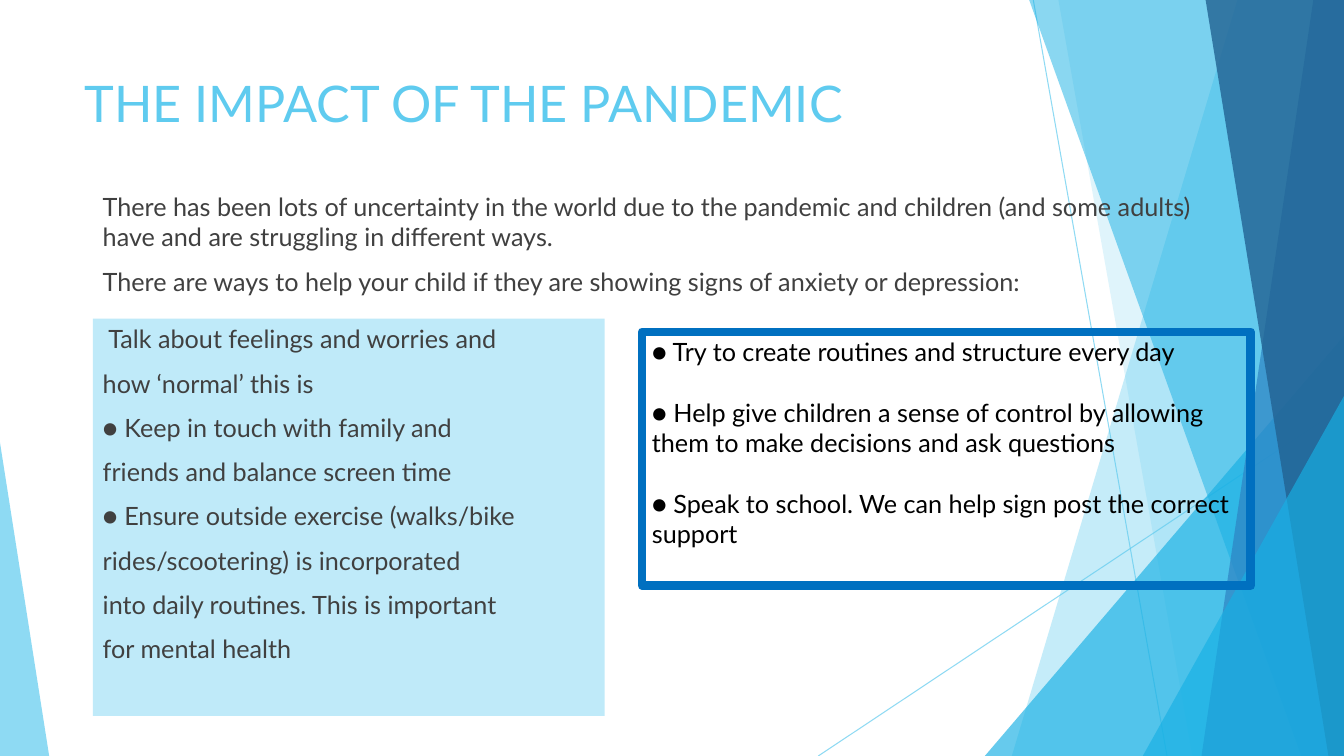
import pptx
import pptx.dml.color
import pptx.enum.shapes
import pptx.enum.text
import pptx.oxml.ns
import pptx.util
from lxml import etree

Cm = pptx.util.Cm
Pt = pptx.util.Pt
RGBColor = pptx.dml.color.RGBColor
MSO_SHAPE = pptx.enum.shapes.MSO_SHAPE
qn = pptx.oxml.ns.qn

SKY = RGBColor(0x5F, 0xCB, 0xEF)
CYAN = RGBColor(0x17, 0xB0, 0xE4)
BLUE = RGBColor(0x2E, 0x83, 0xC3)
NAVY = RGBColor(0x22, 0x62, 0x92)
PALE = RGBColor(0xBF, 0xEA, 0xF9)
FRAME = RGBColor(0x00, 0x70, 0xC0)
GREY = RGBColor(0x40, 0x40, 0x40)
BLACK = RGBColor(0x00, 0x00, 0x00)

presentation = pptx.Presentation()
presentation.slide_width = Cm(33.87)
presentation.slide_height = Cm(19.05)
slide = presentation.slides.add_slide(presentation.slide_layouts[6])
shapes = slide.shapes


def add_panel(top_x, bottom_x):
    right, top, bottom = Cm(33.87), Cm(-0.02), Cm(19.05)
    outline = shapes.build_freeform(Cm(top_x), top)
    outline.add_line_segments([(right, top), (right, bottom), (Cm(bottom_x), bottom)], close=True)
    return outline.convert_to_shape()


def add_triangle(left, top, width, height, apex):
    triangle = shapes.add_shape(
        MSO_SHAPE.ISOSCELES_TRIANGLE, Cm(left), Cm(top), Cm(width), Cm(height))
    triangle.adjustments[0] = apex
    return triangle


rays = []
for x1, y1, x2, y2 in [(26.04, 0, 29.41, 19.05), (33.87, 10.24, 20.62, 19.05)]:
    ray = shapes.add_connector(
        pptx.enum.shapes.MSO_CONNECTOR.STRAIGHT, Cm(x1), Cm(y1), Cm(x2), Cm(y2))
    ray.line.width = Pt(0.75)
    ray.line.fill.solid()
    etree.SubElement(ray._element.spPr, qn("a:effectLst"))
    rays.append((ray.line.fill, ray, SKY, 70))

facets = [
    (add_panel(31.19, 25.5), SKY, 36),
    (add_panel(26.67, 30.05), SKY, 20),
    (add_triangle(24.82, 8.46, 9.05, 10.59, 1), CYAN, 66),
    (add_panel(25.93, 32.79), CYAN, 50),
    (add_panel(33.1, 30.28), BLUE, 70),
    (add_panel(30.38, 33.48), NAVY, 80),
    (add_triangle(28.8, 9.98, 5.07, 9.07, 1), CYAN, 66),
    (add_triangle(0, 11.15, 1.24, 7.9, 0), SKY, 70),
]
for facet, color, opacity in facets:
    facet.shadow.inherit = False
    facet.line.fill.background()
    facet.fill.solid()
    rays.append((facet.fill, facet, color, opacity))

for paint, part, color, opacity in rays:
    paint.fore_color.rgb = color
    tint = next(part._element.spPr.iter(qn("a:srgbClr")))
    etree.SubElement(tint, qn("a:alpha"), val=str(opacity * 1000))

title = shapes.add_textbox(Cm(1.88), Cm(1.7), Cm(23.88), Cm(3.66))
introduction = shapes.add_textbox(Cm(2.34), Cm(4.7), Cm(29.21), Cm(3.33))

home_advice = shapes.add_shape(MSO_SHAPE.RECTANGLE, Cm(2.34), Cm(8.03), Cm(12.9), Cm(10.01))
home_advice.shadow.inherit = False
home_advice.fill.solid()
home_advice.fill.fore_color.rgb = PALE
home_advice.line.fill.background()

support_advice = shapes.add_shape(MSO_SHAPE.RECTANGLE, Cm(16.18), Cm(8.36), Cm(15.34), Cm(6.4))
support_advice.shadow.inherit = False
support_advice.fill.background()
support_advice.line.color.rgb = FRAME
support_advice.line.width = Pt(6)
etree.SubElement(support_advice.line._get_or_add_ln(), qn("a:round"))

texts = [
    (title, 36, SKY, 0, ["THE IMPACT OF THE PANDEMIC"]),
    (introduction, 18, GREY, 10, [
        "There has been lots of uncertainty in the world due to the pandemic and children "
        "(and some adults) have and are struggling in different ways.",
        "There are ways to help your child if they are showing signs of anxiety or depression:",
    ]),
    (home_advice, 18, GREY, 10, [
        " Talk about feelings and worries and",
        "how ‘normal’ this is",
        "● Keep in touch with family and",
        "friends and balance screen time",
        "● Ensure outside exercise (walks/bike",
        "rides/scootering) is incorporated",
        "into daily routines. This is important",
        "for mental health",
    ]),
    (support_advice, 18, BLACK, 21.6, [
        "● Try to create routines and structure every day",
        "● Help give children a sense of control by allowing them to make decisions "
        "and ask questions",
        "● Speak to school. We can help sign post the correct support",
    ]),
]
for box, size, color, gap, lines in texts:
    frame = box.text_frame
    frame.word_wrap = True
    frame.vertical_anchor = pptx.enum.text.MSO_ANCHOR.TOP
    for number, line in enumerate(lines):
        paragraph = frame.add_paragraph() if number else frame.paragraphs[0]
        paragraph.text = line
        paragraph.alignment = pptx.enum.text.PP_ALIGN.LEFT
        paragraph.space_before = Pt(gap if number else 0)
        paragraph.font.name = "Lato"
        paragraph.font.size = Pt(size)
        paragraph.font.color.rgb = color

presentation.save("out.pptx")
